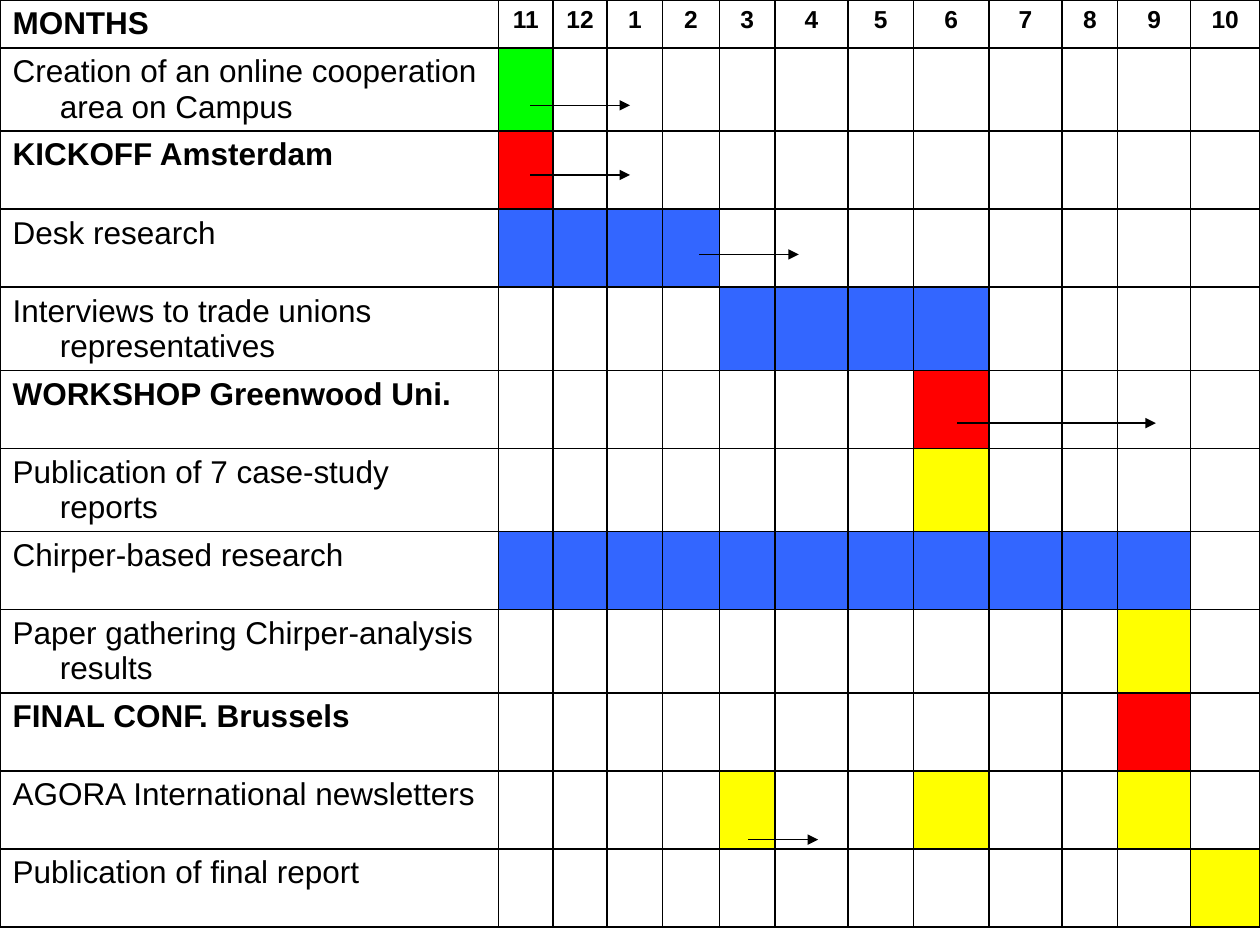
from dataclasses import dataclass

from lxml.etree import SubElement
from pptx import Presentation
from pptx.dml.color import RGBColor
from pptx.enum.shapes import MSO_CONNECTOR
from pptx.enum.text import PP_ALIGN
from pptx.oxml.ns import qn
from pptx.util import Pt


@dataclass(frozen=True)
class Theme:
    font: str = "Arial"
    ink: str = "000000"
    paper: str = "FFFFFF"
    setup: str = "00FF00"
    event: str = "FF0000"
    research: str = "3366FF"
    output: str = "FFFF00"
    task_size: int = 18
    month_size: int = 14
    grid_width: float = 1
    arrow_width: float = 0.75


THEME = Theme()
HANGING = 27
MONTHS = (11, 12, 1, 2, 3, 4, 5, 6, 7, 8, 9, 10)
MONTH_WIDTHS = (31, 31, 31.7, 32.4, 31.7, 41.8, 37.4, 43.2, 41.8, 31.7, 41.8, 39.5)
TASK_WIDTH = 285
HEADER_HEIGHT, ONE_LINE, TWO_LINES = 24.5, 44.6, 46.8

# Task, row height, bold, colour, (first month, last month) of each bar
TASKS = (
    ("Creation of an online cooperation area on Campus", TWO_LINES, False, THEME.setup, [(11, 11)]),
    ("KICKOFF Amsterdam", ONE_LINE, True, THEME.event, [(11, 11)]),
    ("Desk research", ONE_LINE, False, THEME.research, [(11, 2)]),
    ("Interviews to trade unions representatives", TWO_LINES, False, THEME.research, [(3, 6)]),
    ("WORKSHOP Greenwood Uni.", ONE_LINE, True, THEME.event, [(6, 6)]),
    ("Publication of 7 case-study reports", TWO_LINES, False, THEME.output, [(6, 6)]),
    ("Chirper-based research", ONE_LINE, False, THEME.research, [(11, 9)]),
    ("Paper gathering Chirper-analysis results", TWO_LINES, False, THEME.output, [(9, 9)]),
    ("FINAL CONF. Brussels", ONE_LINE, True, THEME.event, [(9, 9)]),
    ("AGORA International newsletters", ONE_LINE, False, THEME.output, [(3, 3), (6, 6), (9, 9)]),
    ("Publication of final report", ONE_LINE, False, THEME.output, [(10, 10)]),
)

# Start x, end x, y
DELAYS = (
    (303, 360, 60.2),
    (303, 360, 100),
    (399.6, 456.5, 145.4),
    (547, 660.5, 241.8),
    (427.7, 467.5, 479.8),
)


def write(cell, text, size=THEME.task_size, bold=False, align=PP_ALIGN.LEFT):
    paragraph = cell.text_frame.paragraphs[0]
    paragraph.alignment = align
    properties = paragraph._p.get_or_add_pPr()
    properties.set("marL", str(Pt(HANGING)))
    properties.set("indent", str(-Pt(HANGING)))
    run = paragraph.add_run()
    run.text = text
    run.font.name = THEME.font
    run.font.size = Pt(size)
    run.font.bold = bold
    run.font.color.rgb = RGBColor.from_string(THEME.ink)


def paint(cell, colour):
    cell.fill.solid()
    cell.fill.fore_color.rgb = RGBColor.from_string(colour)


def draw_borders(cell):
    properties = cell._tc.get_or_add_tcPr()
    for position, side in enumerate(("a:lnL", "a:lnR", "a:lnT", "a:lnB")):
        border = properties.makeelement(qn(side), {"w": str(Pt(THEME.grid_width))})
        properties.insert(position, border)  # borders must precede the fill
        SubElement(SubElement(border, qn("a:solidFill")), qn("a:srgbClr"), val=THEME.ink)


def add_schedule(slide):
    widths = (TASK_WIDTH, *MONTH_WIDTHS)
    heights = (HEADER_HEIGHT, *(task[1] for task in TASKS))
    schedule = slide.shapes.add_table(
        len(heights), len(widths), 0, 0, Pt(sum(widths)), Pt(sum(heights))
    ).table
    schedule.first_row = schedule.horz_banding = False
    for column, width in zip(schedule.columns, widths):
        column.width = Pt(width)
    for row, height in zip(schedule.rows, heights):
        row.height = Pt(height)
    for cell in schedule.iter_cells():
        paint(cell, THEME.paper)
        draw_borders(cell)
    return schedule


def fill_header(schedule):
    write(schedule.cell(0, 0), "MONTHS", bold=True)
    for column, month in enumerate(MONTHS, 1):
        write(schedule.cell(0, column), str(month), size=THEME.month_size,
              bold=True, align=PP_ALIGN.CENTER)


def fill_tasks(schedule):
    for row, (task, _, bold, colour, bars) in enumerate(TASKS, 1):
        write(schedule.cell(row, 0), task, bold=bold)
        for first, last in bars:
            for column in range(MONTHS.index(first), MONTHS.index(last) + 1):
                paint(schedule.cell(row, column + 1), colour)


def add_delay_arrow(slide, start, end, y):
    arrow = slide.shapes.add_connector(MSO_CONNECTOR.STRAIGHT, Pt(start), Pt(y), Pt(end), Pt(y))
    arrow.line.width = Pt(THEME.arrow_width)
    arrow.line.color.rgb = RGBColor.from_string(THEME.ink)
    SubElement(arrow.line._get_or_add_ln(), qn("a:tailEnd"), type="triangle")
    SubElement(arrow._element.spPr, qn("a:effectLst"))


def main():
    deck = Presentation()
    deck.slide_width, deck.slide_height = Pt(720), Pt(540)
    slide = deck.slides.add_slide(deck.slide_layouts[6])
    schedule = add_schedule(slide)
    fill_header(schedule)
    fill_tasks(schedule)
    for delay in DELAYS:
        add_delay_arrow(slide, *delay)
    deck.save("out.pptx")


if __name__ == "__main__":
    main()
